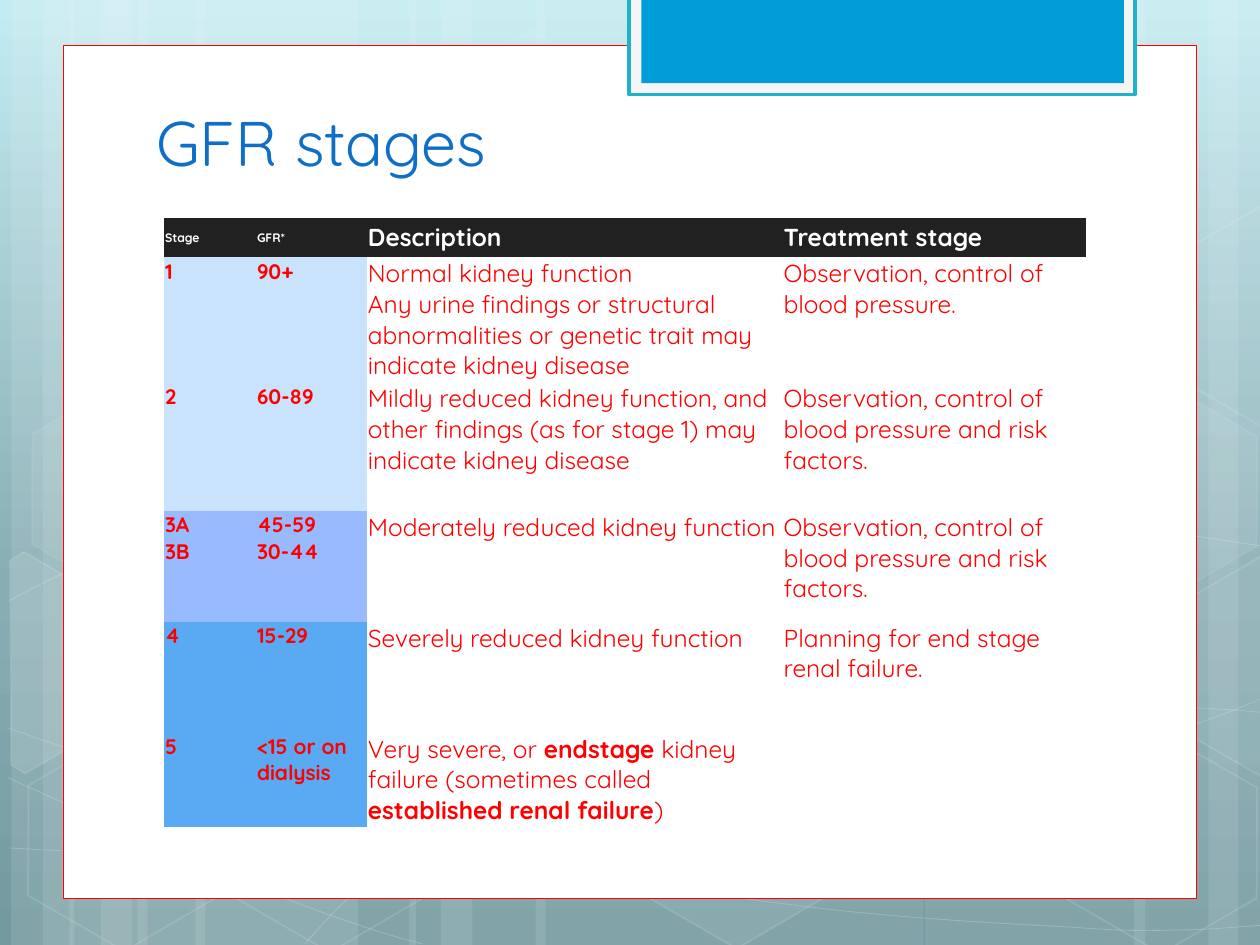
from copy import deepcopy
from lxml.etree import SubElement
from pptx import Presentation
from pptx.dml.color import RGBColor
from pptx.enum.shapes import MSO_SHAPE
from pptx.enum.text import MSO_ANCHOR, PP_ALIGN
from pptx.oxml.ns import qn
from pptx.util import Inches, Pt

FONT = "Quicksand"
NO_STYLE = "{2D5ABB26-0587-4C30-8999-92F81FD0307C}"
GRADIENT = [(0, "C4EBF1"), (0.62, "88ADB3"), (1, "749AA0")]
COLS = [0.73, 0.88, 3.3, 2.41]
HEAD = ["Stage", "GFR*", "Description", "Treatment stage"]
RISK = "Observation, control of blood pressure and risk factors."
ROWS = [
    (0.96, "C8E3FB", ["|1", "|90+", "Normal kidney function\nAny urine findings or structural "
     "abnormalities or genetic trait may indicate kidney disease",
     "Observation, control of blood pressure."]),
    (1.02, "C8E3FB", ["|2", "|60-89", "Mildly reduced kidney function, and other findings "
     "(as for stage 1) may indicate kidney disease", RISK]),
    (0.88, "98BAFF", ["|3A\v3B", "|45-59\v30-44", "Moderately reduced kidney function", RISK]),
    (0.88, "59AAF2", ["|4", "|15-29", "Severely reduced kidney function",
     "Planning for end stage renal failure."]),
    (0.74, "59AAF2", ["|5", "|<15 or on dialysis", "Very severe, or |endstage| kidney failure "
     "(sometimes called |established renal failure|)", ""]),
]
BANDS = [(1.09, 1.75), (0.09, 0.5), (0.34, 0.83), (1.55, 1.75), (0.55, 0.5), (0.8, 0.83),
         (7.34, 1.75), (9.59, 0.5), (9, 0.83), (4.25, 3.08), (3.25, 0.5), (3.5, 0.83)]
CURVES = [
    [(0.07, 6.73), (0.61, 6.76), (1.15, 6.79), (1.9, 6.78), (2.65, 6.77), (3.58, 6.75),
     (4.58, 6.65), (5.58, 6.55), (7, 6.36), (7.92, 6.17), (8.83, 5.98), (9.77, 5.68),
     (10.07, 5.51)],
    [(0.07, 4.77), (0.36, 4.61), (0.65, 4.46), (1.21, 4.31), (1.78, 4.16), (2.59, 3.94),
     (3.47, 3.87), (4.36, 3.8), (5.44, 3.79), (6.54, 3.87), (7.64, 3.95), (9.47, 4.26),
     (10.07, 4.34)],
    [(0.06, 6.17), (1.27, 6.72), (2.47, 7.27), (3.35, 7.49)],
    [(0.07, 5.78), (0.38, 5.89), (0.7, 6), (1.28, 6.16), (1.86, 6.31), (2.73, 6.56),
     (3.57, 6.73), (4.4, 6.9), (5.45, 7.08), (6.28, 7.18), (7.11, 7.29), (8, 7.33),
     (8.53, 7.36), (9.06, 7.4), (9.19, 7.38), (9.45, 7.38), (9.71, 7.37), (9.89, 7.35),
     (10.07, 7.34)],
    [(2.42, 7.49), (2.6, 7.29), (2.78, 7.09), (3.02, 6.91), (3.26, 6.72), (3.6, 6.53),
     (3.88, 6.39), (4.16, 6.25), (4.33, 6.19), (4.69, 6.09), (5.06, 5.99), (5.73, 5.85),
     (6.08, 5.78), (6.44, 5.71), (6.49, 5.71), (6.8, 5.69), (7.11, 5.66), (7.6, 5.63),
     (7.94, 5.62), (8.29, 5.61), (8.86, 5.62), (8.86, 5.62), (9.08, 5.62), (9.31, 5.62),
     (9.53, 5.62), (9.71, 5.63), (9.88, 5.64), (9.97, 5.65), (10.06, 5.66), (10.03, 5.65),
     (10.06, 5.66)],
]
HEXAGONS = [(3.34, 0.36, 4, 8), (4.97, 5.89, 6, 12), (0.11, 5.91, 0, 12), (0.14, 3.12, 7, 8),
            (1.74, 5.92, 0, 12), (7.53, 4.53, 10, 12), (8.34, 5.93, 0, 12), (8.34, 3.14, 7, 8)]
CUT_HEXAGONS = [
    (10, [(0.08, 4.45), (0.19, 4.38), (0.96, 4.83), (0.95, 5.7), (0.2, 6.14), (0.09, 6.07)]),
    (4, [(9.26, 4.85), (10.02, 4.41), (10.09, 4.46), (10.09, 6.13), (10.02, 6.17), (9.26, 5.73)]),
    (0, [(9.26, 2.07), (10.02, 1.63), (10.1, 1.68), (10.09, 3.35), (10.02, 3.39), (9.26, 2.95)]),
]
PANELS = [((0.5, 0.36, 9, 6.77), "FFFFFF", "FF0000", 0.5),
          ((4.99, -0.02, 4.02, 0.77), "F5F5F5", "21B2C9", 2),
          ((5.09, -0.02, 3.83, 0.68), "009DD9", None, 0)]


def color(fill, code, alpha=100):
    """Fill with a hex colour at a percentage of opacity; zero means no fill."""
    if not code or not alpha:
        fill.background()
        return
    fill.solid()
    fill.fore_color.rgb = RGBColor.from_string(code)
    if alpha < 100:
        node = fill._xPr.find(".//" + qn("a:srgbClr"))
        SubElement(node, qn("a:alpha"), val=str(alpha * 1000))


def paint(sp, code, alpha=100, line=None, width=0, line_alpha=100):
    """Set fill and outline of a shape."""
    sp.shadow.inherit = False
    color(sp.fill, code, alpha)
    color(sp.line.fill, line, line_alpha)
    if line:
        sp.line.width = Pt(width)


def add_shape(s, kind, *box):
    """Add a preset shape at a box in inches."""
    return s.shapes.add_shape(kind, *map(Inches, box))


def outline(s, points, close):
    """Build a freeform through points in inches."""
    pts = [(Inches(x), Inches(y)) for x, y in points]
    builder = s.shapes.build_freeform(*pts[0], scale=1.0)
    builder.add_line_segments(pts[1:], close=close)
    return builder.convert_to_shape()


def curve(s, points):
    """Build a freeform whose points are chained cubic Bezier controls."""
    sp = outline(s, points, False)
    track = sp._element.find(".//" + qn("a:path"))
    segments = track.findall(qn("a:lnTo"))
    for i in range(0, len(segments), 3):
        bezier = SubElement(track, qn("a:cubicBezTo"))
        for segment in segments[i:i + 3]:
            bezier.append(segment[0])
            track.remove(segment)
    return sp


def style(r, size, code, bold=False):
    """Format the font of a run."""
    r.font.name, r.font.size, r.font.bold = FONT, Pt(size), bold
    r.font.color.rgb = RGBColor.from_string(code)


def fill_cell(cell, text, size, code, back):
    """Write a cell, where each bar in the text toggles bold."""
    color(cell.fill, back)
    cell.margin_left = cell.margin_right = cell.margin_top = cell.margin_bottom = Inches(0.01)
    tf = cell.text_frame
    for i, line in enumerate(text.split("\n")):
        p = tf.paragraphs[0] if i == 0 else tf.add_paragraph()
        for j, part in enumerate(line.split("|")):
            for k, piece in enumerate(part.split("\v")):
                if k:
                    p.add_line_break()
                if piece:
                    r = p.add_run()
                    r.text = piece
                    style(r, size, code, j % 2 == 1)


def add_background(s):
    """Draw the gradient, bands, curves, hexagons and panels."""
    fill = s.background.fill
    fill.gradient()
    fill.gradient_angle = 270
    stops = s.element.find(".//" + qn("a:gsLst"))
    stops.insert(1, deepcopy(stops[0]))
    for stop, (position, code) in zip(fill.gradient_stops, GRADIENT):
        stop.position = position
        stop.color.rgb = RGBColor.from_string(code)
    for left, width in BANDS:
        paint(add_shape(s, MSO_SHAPE.RECTANGLE, left, 0, width, 7.5), "FFFFFF", 10)
    for points in CURVES:
        paint(curve(s, points), None, 0, "FFFFFF", 0.5, 20)
    for left, top, alpha, line_alpha in HEXAGONS:
        sp = add_shape(s, MSO_SHAPE.HEXAGON, left, top, 1.75, 1.52)
        sp.adjustments[0] = 0.285
        sp.rotation = 30
        paint(sp, "FFFFFF", alpha, "FFFFFF", 1, line_alpha)
    for alpha, points in CUT_HEXAGONS:
        paint(outline(s, points, True), "FFFFFF", alpha, "FFFFFF", 1, 12)
    for box, code, line, width in PANELS:
        paint(add_shape(s, MSO_SHAPE.RECTANGLE, *box), code, 100, line, width)


def add_title(s):
    """Place the title above the panels."""
    title = s.shapes.title
    title.left, title.top, title.width, title.height = map(Inches, (1.14, 0.73, 7.68, 0.74))
    tf = title.text_frame
    tf.text = "GFR stages"
    tf.vertical_anchor = MSO_ANCHOR.BOTTOM
    p = tf.paragraphs[0]
    p.alignment = PP_ALIGN.LEFT
    style(p.runs[0], 36, "0F6FC6")
    s.shapes._spTree.append(title._element)


def add_stages(s):
    """Add the table of stages."""
    heights = [0.31] + [row[0] for row in ROWS]
    frame = s.shapes.add_table(len(heights), len(COLS), *map(
        Inches, (1.3, 1.73, sum(COLS), sum(heights))))
    table = frame.table
    frame._element.find(".//" + qn("a:tableStyleId")).text = NO_STYLE
    for column, width in zip(table.columns, COLS):
        column.width = Inches(width)
    for row, height in zip(table.rows, heights):
        row.height = Inches(height)
    for c, text in enumerate(HEAD):
        cell = table.cell(0, c)
        cell.vertical_anchor = MSO_ANCHOR.MIDDLE
        fill_cell(cell, "|" + text, 7 if c < 2 else 14, "FFFFFF", "212121")
    for i, (_, back, texts) in enumerate(ROWS, 1):
        for c, text in enumerate(texts):
            size, fill = (12, back) if c < 2 else (14, "FFFFFF")
            fill_cell(table.cell(i, c), text, size, "FF0000", fill)


def main():
    """Build and save the slide."""
    prs = Presentation()
    prs.slide_width, prs.slide_height = Inches(10), Inches(7.5)
    s = prs.slides.add_slide(prs.slide_layouts[5])
    add_background(s)
    add_title(s)
    add_stages(s)
    prs.save("out.pptx")


if __name__ == "__main__":
    main()
